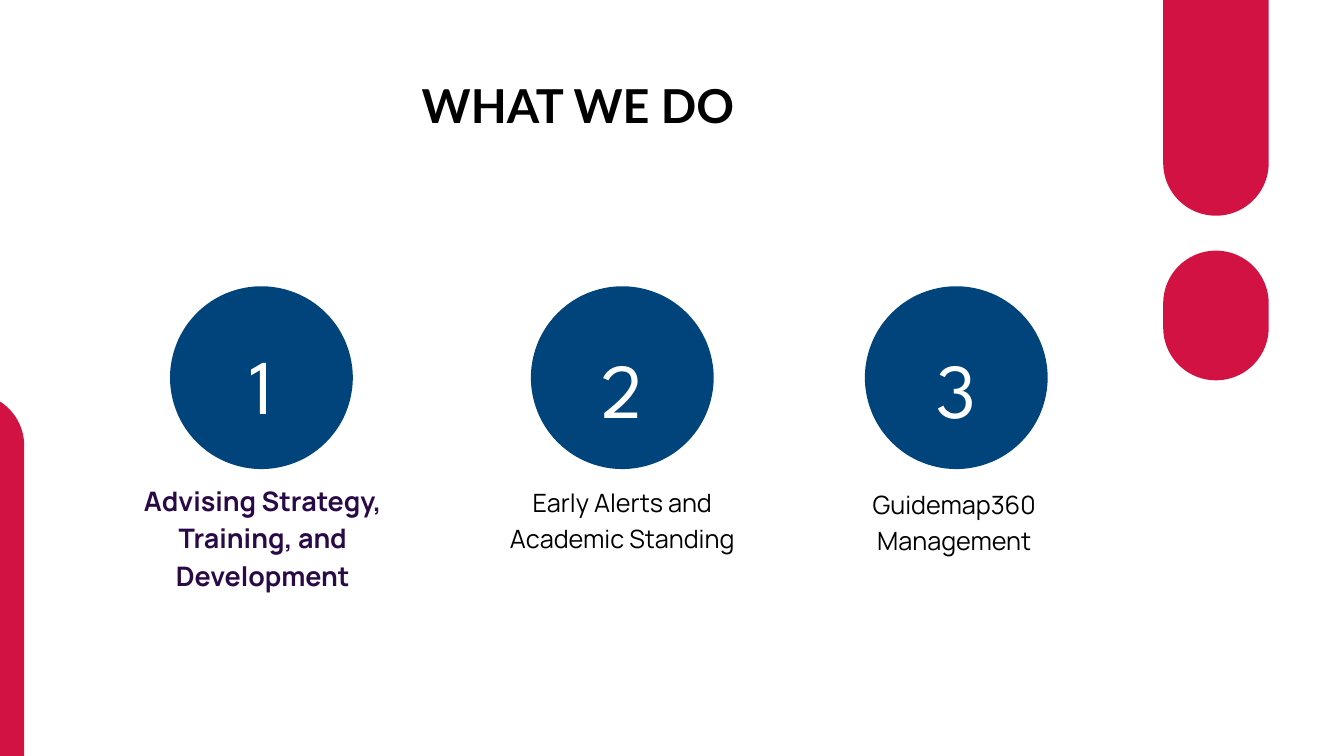
from pptx import Presentation
from pptx.dml.color import RGBColor
from pptx.enum.shapes import MSO_SHAPE
from pptx.enum.text import MSO_AUTO_SIZE, PP_ALIGN
from pptx.util import Inches, Pt

CRIMSON = RGBColor(0xD1, 0x12, 0x42)
NAVY = RGBColor(0x00, 0x44, 0x7C)
PLUM = RGBColor(0x2A, 0x09, 0x47)
BLACK = RGBColor(0x00, 0x00, 0x00)
WHITE = RGBColor(0xFF, 0xFF, 0xFF)

COLUMNS, ROWS = 20, 11.25
PILL_WIDTH = 1.57
CIRCLE_SIZE, CIRCLE_TOP = 2.72, 4.26


class SlideBuilder:
    """Draws styled elements on one slide, measured in grid columns and rows."""

    def __init__(self, deck):
        self.column = deck.slide_width / COLUMNS
        self.row = deck.slide_height / ROWS
        self.slide = deck.slides.add_slide(deck.slide_layouts[6])

    def place(self, left, top, width, height):
        return (round(left * self.column), round(top * self.row),
                round(width * self.column), round(height * self.row))

    def solid(self, kind, color, *area):
        solid = self.slide.shapes.add_shape(kind, *self.place(*area))
        solid.fill.solid()
        solid.fill.fore_color.rgb = color
        solid.line.fill.background()
        solid.shadow.inherit = False
        return solid

    def pill(self, left, top, height):
        pill = self.solid(MSO_SHAPE.ROUNDED_RECTANGLE, CRIMSON, left, top, PILL_WIDTH, height)
        pill.adjustments[0] = 0.5

    def circle(self, center):
        self.solid(MSO_SHAPE.OVAL, NAVY, center - CIRCLE_SIZE / 2, CIRCLE_TOP,
                   CIRCLE_SIZE, CIRCLE_SIZE)

    def label(self, wording, center, top, width, height, font, size, leading, color, bold=False):
        label = self.slide.shapes.add_textbox(
            *self.place(center - width / 2, top, width, height))
        frame = label.text_frame
        frame.word_wrap = True
        frame.auto_size = MSO_AUTO_SIZE.SHAPE_TO_FIT_TEXT
        frame.margin_left = frame.margin_right = frame.margin_top = frame.margin_bottom = 0
        frame.text = wording
        paragraph = frame.paragraphs[0]
        paragraph.alignment = PP_ALIGN.CENTER
        paragraph.line_spacing = Pt(leading)
        for run in paragraph.runs:
            run.font.name = font
            run.font.size = Pt(size)
            run.font.bold = bold
            run.font.color.rgb = color

    def service(self, number, center, number_top, caption, caption_center, caption_top,
                width, height, size, leading, color, bold):
        self.circle(center)
        self.label(number, center, number_top, 1.8, 1.52, "League Spartan", 83, 116.3, WHITE)
        self.label(caption, caption_center, caption_top, width, height,
                   "Manrope", size, leading, color, bold)


def main():
    deck = Presentation()
    deck.slide_width, deck.slide_height = Inches(20), Inches(11.25)
    builder = SlideBuilder(deck)

    for left, top, height in ((17.31, -3.22, 6.43), (17.31, 3.73, 1.93), (-1.21, 5.85, 6.43)):
        builder.pill(left, top, height)

    builder.label("WHAT WE DO", 8.6, 1.01, 14.95, 0.94, "Lato", 50.1, 70.1, BLACK, True)

    services = (
        ("1", 3.89, 4.79, "Advising Strategy, Training, and Development",
         3.91, 7.13, 3.9, 2.21, 28.8, 40.3, PLUM, True),
        ("2", 9.26, 4.84, "Early Alerts and Academic Standing",
         9.26, 7.15, 3.67, 1.61, 27, 39.2, BLACK, False),
        ("3", 14.23, 4.84, "Guidemap360 Management",
         14.2, 7.18, 3.77, 1.06, 27, 39.2, BLACK, False),
    )
    for service in services:
        builder.service(*service)

    deck.save("out.pptx")


if __name__ == "__main__":
    main()
